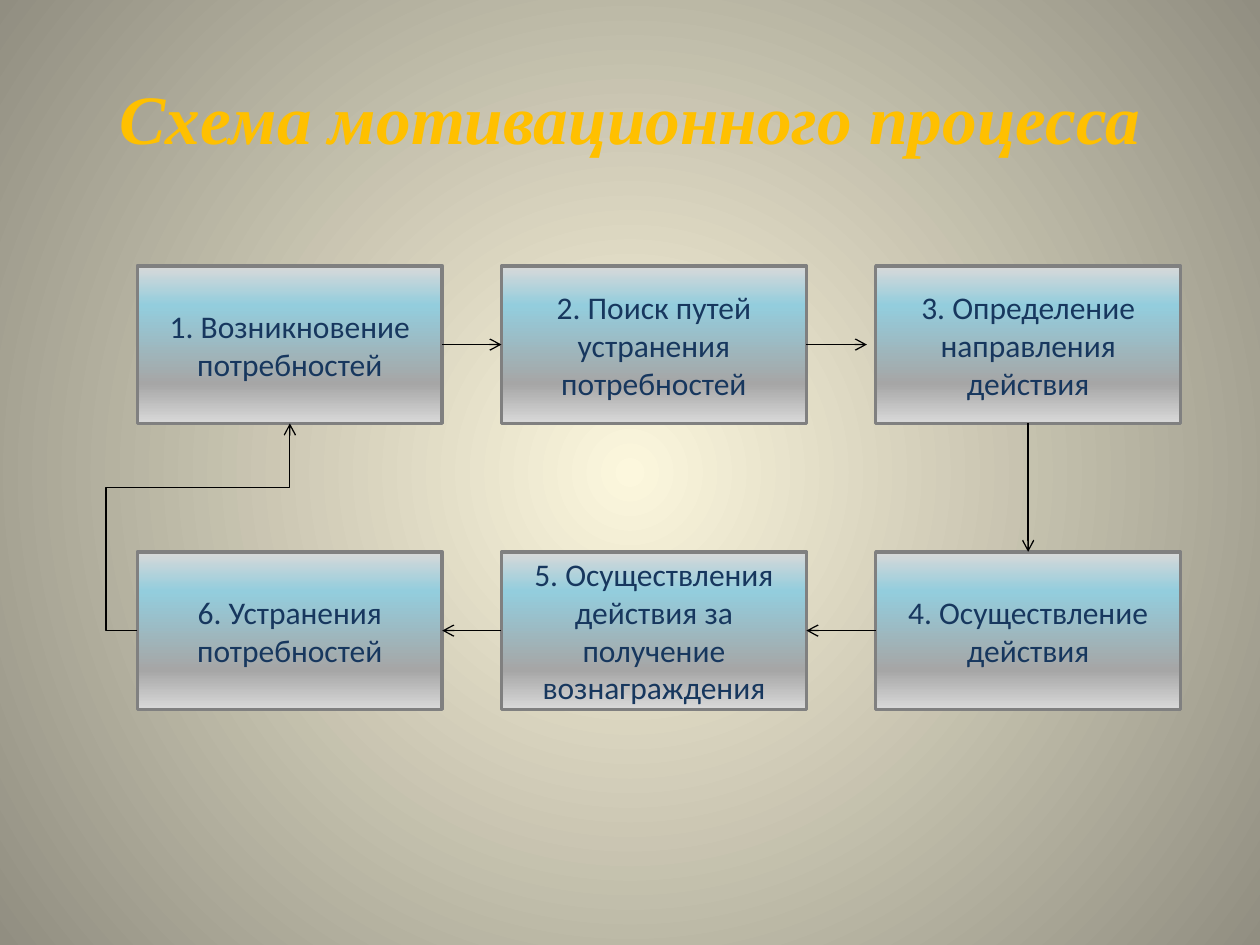
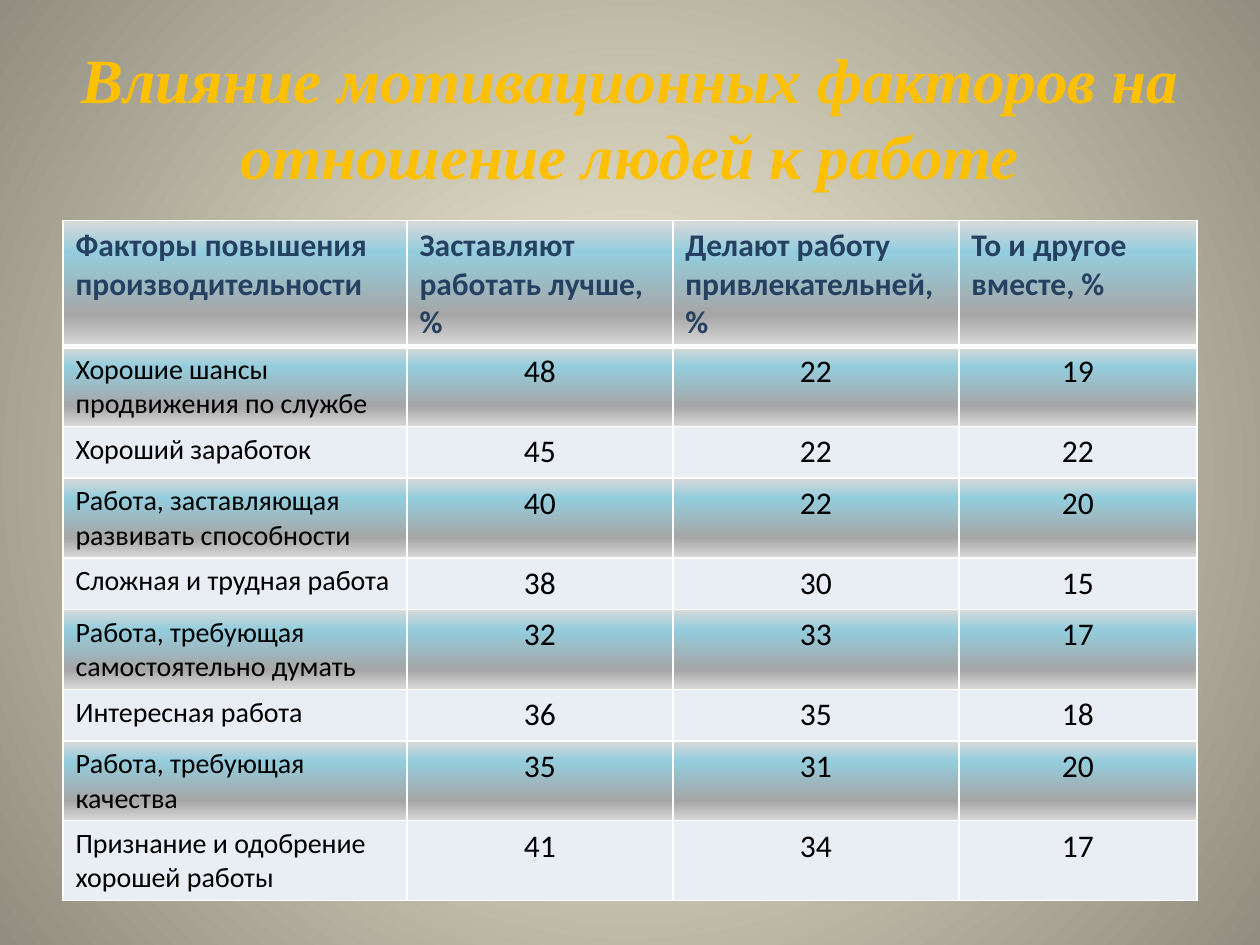
from dataclasses import dataclass

from lxml.etree import SubElement
from pptx import Presentation
from pptx.dml.color import RGBColor
from pptx.enum.shapes import MSO_CONNECTOR as Link, MSO_SHAPE as Shape
from pptx.enum.text import MSO_ANCHOR as Anchor, PP_ALIGN as Align
from pptx.oxml.ns import qn
from pptx.util import Inches, Pt

# Connection sites of a rectangle
TOP, LEFT, BOTTOM, RIGHT = range(4)


@dataclass(frozen=True)
class Theme:
    heading_font: str = "Times New Roman"
    body_font: str = "Calibri"
    gold: str = "FFC000"
    step_text: str = "17375E"
    header_text: str = "254061"
    black: str = "000000"
    frame: str = "808080"
    grid: str = "FFFFFF"
    plain_row: str = "E9EDF4"
    backdrop: tuple = ((0, "FCF7DD"), (100, "918E81"))
    steel: tuple = ((0, "D9D9D9"), (25, "A6A6A6"), (75, "93CDDD"), (100, "D9D9D9"))
    cycle_title_size: float = 39.6
    factors_title_size: float = 36
    body_size: float = 18
    factor_size: float = 16


def apply(target, values):
    for name, value in values.items():
        setattr(target, name, value)


def add_node(parent, tag, **attributes):
    return SubElement(parent, qn(tag), {k: str(v) for k, v in attributes.items()})


def paint_gradient(fill, owner, stops, radial=False):
    """Fill with a gradient rising from the bottom or spreading from the centre."""
    fill.gradient()
    gradient = next(owner.iter(qn("a:gradFill")))
    for child in list(gradient):
        gradient.remove(child)
    stop_list = add_node(gradient, "a:gsLst")
    for position, color in stops:
        stop = add_node(stop_list, "a:gs", pos=position * 1000)
        add_node(stop, "a:srgbClr", val=color)
    if radial:
        circle = add_node(gradient, "a:path", path="circle")
        add_node(circle, "a:fillToRect", **dict.fromkeys("ltrb", 50000))
    else:
        add_node(gradient, "a:lin", ang=270 * 60000, scaled=0)


class Deck:
    def __init__(self, theme):
        self.theme = theme
        self.show = Presentation()
        apply(self.show, {"slide_width": Inches(10), "slide_height": Inches(7.5)})
        self.slide = None

    def new_slide(self, title, size):
        self.slide = self.show.slides.add_slide(self.show.slide_layouts[6])
        paint_gradient(self.slide.background.fill, self.slide._element,
                       self.theme.backdrop, radial=True)
        heading = self.slide.shapes.add_textbox(
            Inches(0.5), Inches(0.3), Inches(9), Inches(1.25))
        self.put_text(heading.text_frame, title, self.theme.gold, Align.CENTER,
                      name=self.theme.heading_font, size=Pt(size), bold=True, italic=True)
        apply(heading.text_frame, {"word_wrap": True, "vertical_anchor": Anchor.MIDDLE})

    def put_text(self, frame, text, color, align, **font):
        paragraph = frame.paragraphs[0]
        paragraph.alignment = align
        run = paragraph.add_run()
        run.text = text
        defaults = {"name": self.theme.body_font, "size": Pt(self.theme.body_size),
                    "bold": False}
        apply(run.font, defaults | font)
        run.font.color.rgb = RGBColor.from_string(color)

    def outline(self, line, color, width):
        line.color.rgb = RGBColor.from_string(color)
        line.width = Pt(width)

    def step(self, text, left, top):
        box = self.slide.shapes.add_shape(
            Shape.RECTANGLE, Inches(left), Inches(top), Inches(2.42), Inches(1.25))
        box.shadow.inherit = False
        paint_gradient(box.fill, box._element, self.theme.steel)
        self.outline(box.line, self.theme.frame, 2)
        apply(box.text_frame, {"word_wrap": True, "vertical_anchor": Anchor.MIDDLE})
        self.put_text(box.text_frame, text, self.theme.step_text, Align.CENTER)
        return box

    def arrow(self, start, start_site, end, end_site, kind=Link.STRAIGHT):
        link = self.slide.shapes.add_connector(kind, 0, 0, 0, 0)
        link.begin_connect(start, start_site)
        link.end_connect(end, end_site)
        self.outline(link.line, self.theme.black, 0.75)
        properties = link._element.spPr
        add_node(properties.find(qn("a:ln")), "a:tailEnd", type="arrow")
        add_node(properties, "a:effectLst")
        return link

    def return_arrow(self, start, end):
        """Leave start on its left, go round and enter end from below."""
        link = self.arrow(start, LEFT, end, BOTTOM, Link.ELBOW)
        properties = link._element.spPr
        frame = properties.find(qn("a:xfrm"))
        frame.attrib.pop("flipV", None)
        frame.set("rot", str(180 * 60000))
        frame.set("flipH", "1")
        geometry = properties.find(qn("a:prstGeom"))
        geometry.set("prst", "bentConnector4")
        guides = geometry.find(qn("a:avLst"))
        for name, value in (("adj1", -20600), ("adj2", 69000)):
            add_node(guides, "a:gd", name=name, fmla=f"val {value}")

    def cell_borders(self, cell, top, bottom):
        properties = cell._tc.get_or_add_tcPr()
        for side, width in zip("LRTB", (1, 1, top, bottom)):
            edge = add_node(properties, f"a:ln{side}", w=Pt(width))
            add_node(add_node(edge, "a:solidFill"), "a:srgbClr", val=self.theme.grid)

    def table(self, rows, left, top, widths, row_height):
        theme = self.theme
        grid = self.slide.shapes.add_table(
            len(rows), len(widths), Inches(left), Inches(top),
            Inches(sum(widths)), Inches(row_height * len(rows))).table
        for column, width in zip(grid.columns, widths):
            column.width = Inches(width)
        for r, row in enumerate(rows):
            for c, text in enumerate(row):
                cell = grid.cell(r, c)
                self.cell_borders(cell, 3 if r == 1 else 1, 3 if r == 0 else 1)
                # The header and every odd row are steel
                if r == 0 or r % 2:
                    paint_gradient(cell.fill, cell._tc, theme.steel)
                else:
                    cell.fill.solid()
                    cell.fill.fore_color.rgb = RGBColor.from_string(theme.plain_row)
                if r == 0:
                    self.put_text(cell.text_frame, text, theme.header_text, Align.LEFT,
                                  bold=True)
                elif c == 0:
                    self.put_text(cell.text_frame, text, theme.black, Align.LEFT,
                                  size=Pt(theme.factor_size))
                else:
                    self.put_text(cell.text_frame, str(text), theme.black, Align.CENTER)


def motivation_cycle(deck):
    deck.new_slide("Схема мотивационного процесса", deck.theme.cycle_title_size)
    # Steps run right along the top row and back along the bottom one
    columns = (1.09, 3.98, 6.95)
    places = [(x, 2.11) for x in columns] + [(x, 4.38) for x in reversed(columns)]
    labels = (
        "1. Возникновение потребностей",
        "2. Поиск путей устранения потребностей",
        "3. Определение направления действия",
        "4. Осуществление действия",
        "5. Осуществления действия за получение вознаграждения",
        "6. Устранения потребностей",
    )
    need, search, direction, action, reward, relief = [
        deck.step(label, *place) for label, place in zip(labels, places)]

    # Arrows between the steps; the second stops short of its box
    deck.arrow(need, RIGHT, search, LEFT)
    short_arrow = deck.arrow(search, RIGHT, direction, LEFT)
    short_arrow.end_x = Inches(6.88)
    short_arrow._element.nvCxnSpPr.cNvCxnSpPr._remove_endCxn()
    deck.arrow(direction, BOTTOM, action, TOP)
    deck.arrow(action, LEFT, reward, RIGHT)
    deck.arrow(reward, LEFT, relief, RIGHT)
    deck.return_arrow(relief, need)


def motivation_factors(deck):
    deck.new_slide("Влияние мотивационных факторов на отношение людей к работе",
                   deck.theme.factors_title_size)
    factors = (
        ("Факторы повышения производительности", "Заставляют работать лучше, %",
         "Делают работу привлекательней, %", "То и другое вместе, %"),
        ("Хорошие шансы продвижения по службе", 48, 22, 19),
        ("Хороший заработок", 45, 22, 22),
        ("Работа, заставляющая развивать способности", 40, 22, 20),
        ("Сложная и трудная работа", 38, 30, 15),
        ("Работа, требующая самостоятельно думать", 32, 33, 17),
        ("Интересная работа", 36, 35, 18),
        ("Работа, требующая качества", 35, 31, 20),
        ("Признание и одобрение хорошей работы", 41, 34, 17),
    )
    deck.table(factors, 0.5, 1.75, (2.73, 2.11, 2.27, 1.89), 0.41)


def main():
    deck = Deck(Theme())
    motivation_cycle(deck)
    motivation_factors(deck)
    deck.show.save("out.pptx")


if __name__ == "__main__":
    main()
